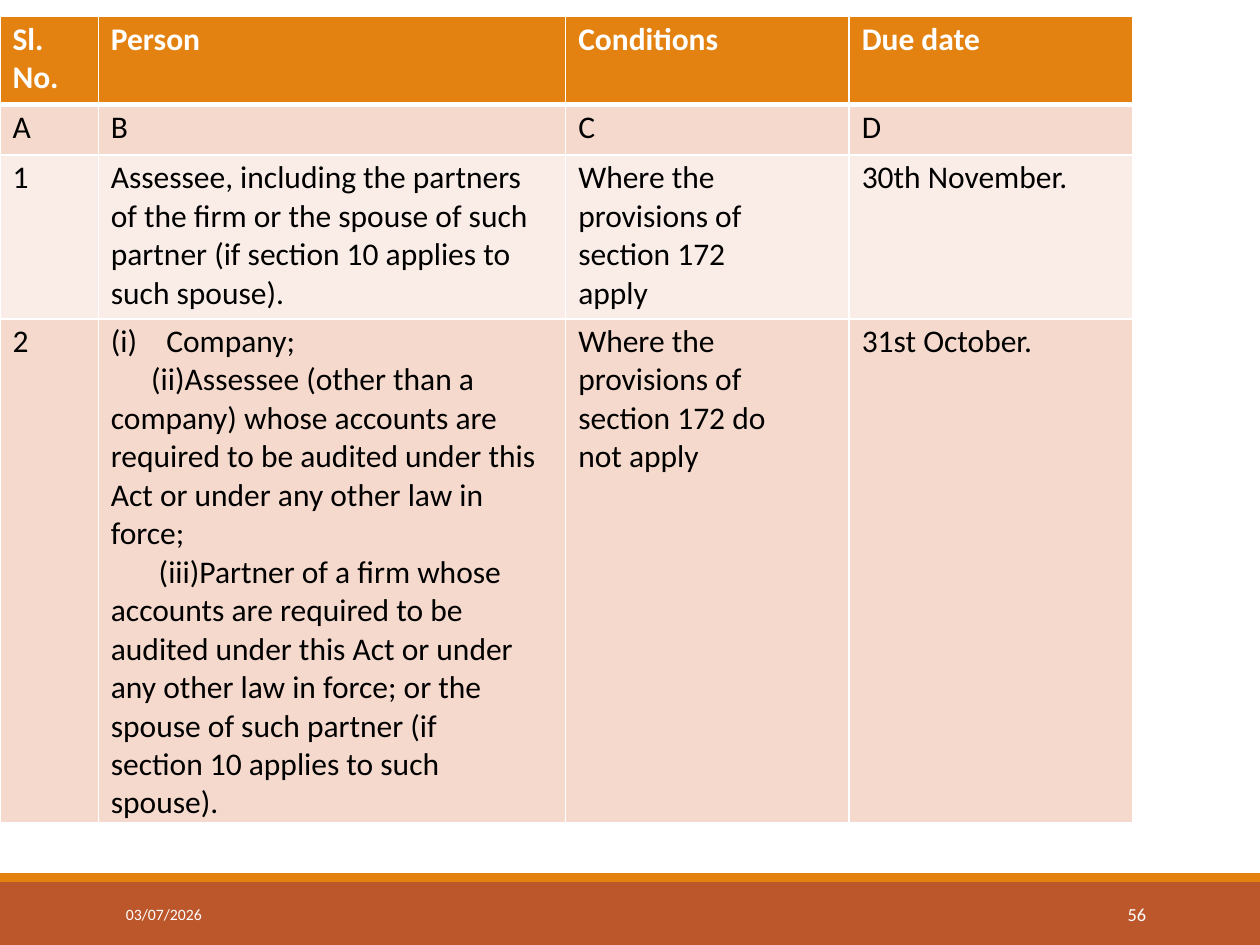
import pptx
import pptx.util
import pptx.dml.color
import pptx.enum.shapes
import pptx.oxml.ns
from lxml import etree

Inches, Pt = pptx.util.Inches, pptx.util.Pt
RGBColor = pptx.dml.color.RGBColor
qn = pptx.oxml.ns.qn

ORANGE = RGBColor(0xE4, 0x82, 0x11)
RUST = RGBColor(0xBC, 0x57, 0x2C)
PEACH = RGBColor(0xF5, 0xD9, 0xCC)
PALE = RGBColor(0xFA, 0xED, 0xE7)
WHITE = RGBColor(0xFF, 0xFF, 0xFF)
BLACK = RGBColor(0, 0, 0)

# Content: each cell is a list of paragraphs
ROWS = [
    [["Sl.", "No."], ["Person"], ["Conditions"], ["Due date"]],
    [["A"], ["B"], ["C"], ["D"]],
    [["1"],
     ["Assessee, including the partners of the firm or the spouse of such "
      "partner (if section 10 applies to such spouse)."],
     ["Where the provisions of section 172 apply"],
     ["30th November."]],
    [["2"],
     ["Company;",
      "Assessee (other than a company) whose accounts are required to be "
      "audited under this Act or under any other law in force;",
      "Partner of a firm whose accounts are required to be audited under this "
      "Act or under any other law in force; or the spouse of such partner (if "
      "section 10 applies to such spouse)."],
     ["Where the provisions of section 172 do not apply"],
     ["31st October."]],
]
COLUMN_WIDTHS = [0.78, 3.71, 2.25, 2.25]
ROW_HEIGHTS = [0.7, 0.4, 1.3, 3.7]
ROW_FILLS = [ORANGE, PEACH, PALE, PEACH]
RIGHT_INDENTS = [0, 0.3, 0.5, 0]
# Left margin, first-line indent and right margin of the numbered persons
NUMBERED = [(0.54, -0.44, 0), (0.1, 0.32, 0.15), (0.1, 0.38, 0.3)]
# Top, height, colour
BANDS = [(7, 0.5, RUST), (6.93, 0.07, ORANGE)]
# Text, left, top, width, height, size, line spacing, left margin
FOOTER = [
    ("03/07/2026", 0.99, 7.2, 0.63, 0.15, 9, 9.6, 0.01),
    ("56", 8.83, 7.19, 0.32, 0.17, 10.5, 11.1, 0.12),
]


def write(paragraph, text, size=18, color=BLACK, bold=False, left=0.1,
          first=0, right=0, before=0, line=None, numbered=False):
    paragraph.space_before = Pt(before)
    if line:
        paragraph.line_spacing = Pt(line)
    properties = paragraph._p.get_or_add_pPr()
    for name, value in (("marL", left), ("indent", first), ("marR", right)):
        properties.set(name, str(Inches(value)))
    if numbered:
        etree.SubElement(properties, qn("a:buAutoNum"), type="romanLcParenBoth")
        tabs = etree.SubElement(properties, qn("a:tabLst"))
        stop = str(Inches(left + max(first, 0)))
        etree.SubElement(tabs, qn("a:tab"), pos=stop, algn="l")
    run = paragraph.add_run()
    run.text = text
    run.font.name = "Calibri"
    run.font.size = Pt(size)
    run.font.bold = bold
    run.font.color.rgb = color


def clear_margins(box, top=0):
    box.margin_left = box.margin_right = box.margin_bottom = 0
    box.margin_top = Inches(top)


def set_borders(cell, widths):
    properties = cell._tc.get_or_add_tcPr()
    for position, side in enumerate("LRTB"):
        line = etree.Element(qn("a:ln" + side), w=str(Pt(widths[side])))
        fill = etree.SubElement(line, qn("a:solidFill"))
        etree.SubElement(fill, qn("a:srgbClr"), val=str(WHITE))
        properties.insert(position, line)


presentation = pptx.Presentation()
presentation.slide_width, presentation.slide_height = Inches(10), Inches(7.5)
slide = presentation.slides.add_slide(presentation.slide_layouts[6])

# Footer bands
for top, height, color in BANDS:
    band = slide.shapes.add_shape(
        pptx.enum.shapes.MSO_SHAPE.RECTANGLE,
        0, Inches(top), presentation.slide_width, Inches(height))
    band.shadow.inherit = False
    band.fill.solid()
    band.fill.fore_color.rgb = color
    band.line.fill.background()

# Due date table
table = slide.shapes.add_table(
    len(ROWS), len(COLUMN_WIDTHS), 0, Inches(0.13),
    Inches(sum(COLUMN_WIDTHS)), Inches(sum(ROW_HEIGHTS))).table
for column, width in zip(table.columns, COLUMN_WIDTHS):
    column.width = Inches(width)
for r, cells in enumerate(ROWS):
    table.rows[r].height = Inches(ROW_HEIGHTS[r])
    header = r == 0
    for c, texts in enumerate(cells):
        cell = table.cell(r, c)
        clear_margins(cell, top=0.03)
        cell.fill.solid()
        cell.fill.fore_color.rgb = ROW_FILLS[r]
        set_borders(cell, {"L": 1, "R": 1, "T": 3 if r == 1 else 1,
                           "B": 3 if header else 1})
        numbered = len(texts) == len(NUMBERED)
        for i, text in enumerate(texts):
            frame = cell.text_frame
            paragraph = frame.add_paragraph() if i else frame.paragraphs[0]
            left, first, right = (
                NUMBERED[i] if numbered else (0.1, 0, RIGHT_INDENTS[c]))
            write(paragraph, text, color=WHITE if header else BLACK,
                  bold=header, left=left, first=first, right=right,
                  before=0 if i else 2.4, numbered=numbered)

# Date and page number
for text, left, top, width, height, size, line, margin in FOOTER:
    frame = slide.shapes.add_textbox(
        Inches(left), Inches(top), Inches(width), Inches(height)).text_frame
    frame.word_wrap = True
    clear_margins(frame)
    write(frame.paragraphs[0], text, size=size, color=WHITE, left=margin,
          line=line)

presentation.save("out.pptx")
